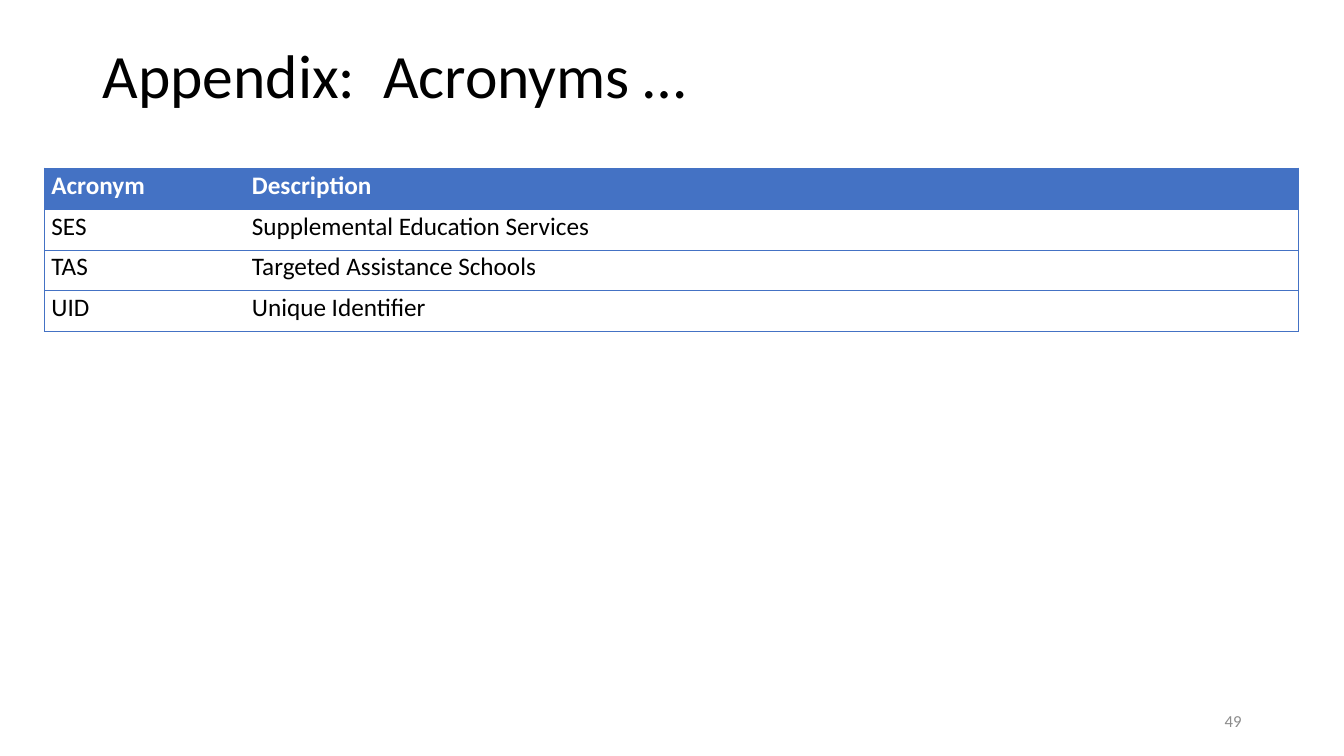
from lxml import etree
from pptx import Presentation
from pptx.dml.color import RGBColor
from pptx.enum.text import MSO_ANCHOR, MSO_AUTO_SIZE, PP_ALIGN
from pptx.oxml.ns import qn
from pptx.util import Emu, Pt

TOP, MIDDLE = MSO_ANCHOR.TOP, MSO_ANCHOR.MIDDLE
LEFT, RIGHT = PP_ALIGN.LEFT, PP_ALIGN.RIGHT
NO_AUTOFIT = MSO_AUTO_SIZE.NONE
TITLE_ONLY = 5
BLUE, WHITE, BLACK, GREY = "4472C4", "FFFFFF", "000000", "8C8C8C"
ACRONYMS = [
    ("Acronym", "Description"),
    ("SES", "Supplemental Education Services"),
    ("TAS", "Targeted Assistance Schools"),
    ("UID", "Unique Identifier"),
]


def px(length):
    return Emu(length * 9525)


def color(value):
    return RGBColor.from_string(value)


class AcronymPage:
    """Holds the style and the current slide, and adds its elements."""

    font = "Calibri"

    def __init__(self, deck):
        self.page = deck.slides.add_slide(deck.slide_layouts[TITLE_ONLY])

    def add_text(self, frame, text, size, tint, align=LEFT, spacing=1.0, bold=False):
        para = frame.paragraphs[0]
        para.alignment = align
        para.line_spacing = spacing
        span = para.add_run()
        span.text = text
        span.font.name = self.font
        span.font.size = Pt(size)
        span.font.bold = bold
        span.font.color.rgb = color(tint)

    def place(self, box, left, top, width, height, anchor):
        box.left, box.top = px(left), px(top)
        box.width, box.height = px(width), px(height)
        frame = box.text_frame
        frame.word_wrap = True
        frame.auto_size = NO_AUTOFIT
        frame.vertical_anchor = anchor
        return frame

    def title(self, text, *bounds):
        frame = self.place(self.page.shapes.title, *bounds, TOP)
        self.add_text(frame, text, 44, BLACK, spacing=0.9)

    def page_number(self, text, *bounds):
        box = self.page.shapes.add_textbox(0, 0, 0, 0)
        self.add_text(self.place(box, *bounds, MIDDLE), text, 12, GREY, RIGHT)

    def border(self, cell, side, visible):
        properties = cell._tc.get_or_add_tcPr()
        line = etree.SubElement(properties, qn(f"a:ln{side}"), w=str(Pt(0.5)))
        if visible:
            fill = etree.SubElement(line, qn("a:solidFill"))
            etree.SubElement(fill, qn("a:srgbClr"), val=BLUE)
        else:
            etree.SubElement(line, qn("a:noFill"))

    def table(self, rows, left, top, widths, row_height):
        frame = self.page.shapes.add_table(
            len(rows), len(widths), px(left), px(top),
            px(sum(widths)), px(row_height * len(rows)))
        grid = frame.table
        grid.horz_banding = False
        for column, width in zip(grid.columns, widths):
            column.width = px(width)
        for row_index, texts in enumerate(rows):
            grid.rows[row_index].height = px(row_height)
            header = row_index == 0
            for column_index, text in enumerate(texts):
                cell = grid.cell(row_index, column_index)
                cell.margin_left = cell.margin_right = px(7)
                cell.margin_top = cell.margin_bottom = 0
                cell.vertical_anchor = TOP
                self.border(cell, "L", column_index == 0)
                self.border(cell, "R", column_index == len(widths) - 1)
                self.border(cell, "T", True)
                self.border(cell, "B", True)
                cell.fill.solid()
                cell.fill.fore_color.rgb = color(BLUE if header else WHITE)
                self.add_text(cell.text_frame, text, 18, WHITE if header else BLACK,
                              spacing=1.07, bold=header)


def main():
    deck = Presentation()
    deck.slide_width, deck.slide_height = px(1280), px(720)
    page = AcronymPage(deck)
    page.page_number("49", 904, 667, 288, 38)
    page.title("Appendix:  Acronyms …", 88, 38, 1104, 139)
    page.table(ACRONYMS, 42, 160, [191, 1004], 39)
    deck.save("out.pptx")


if __name__ == "__main__":
    main()
